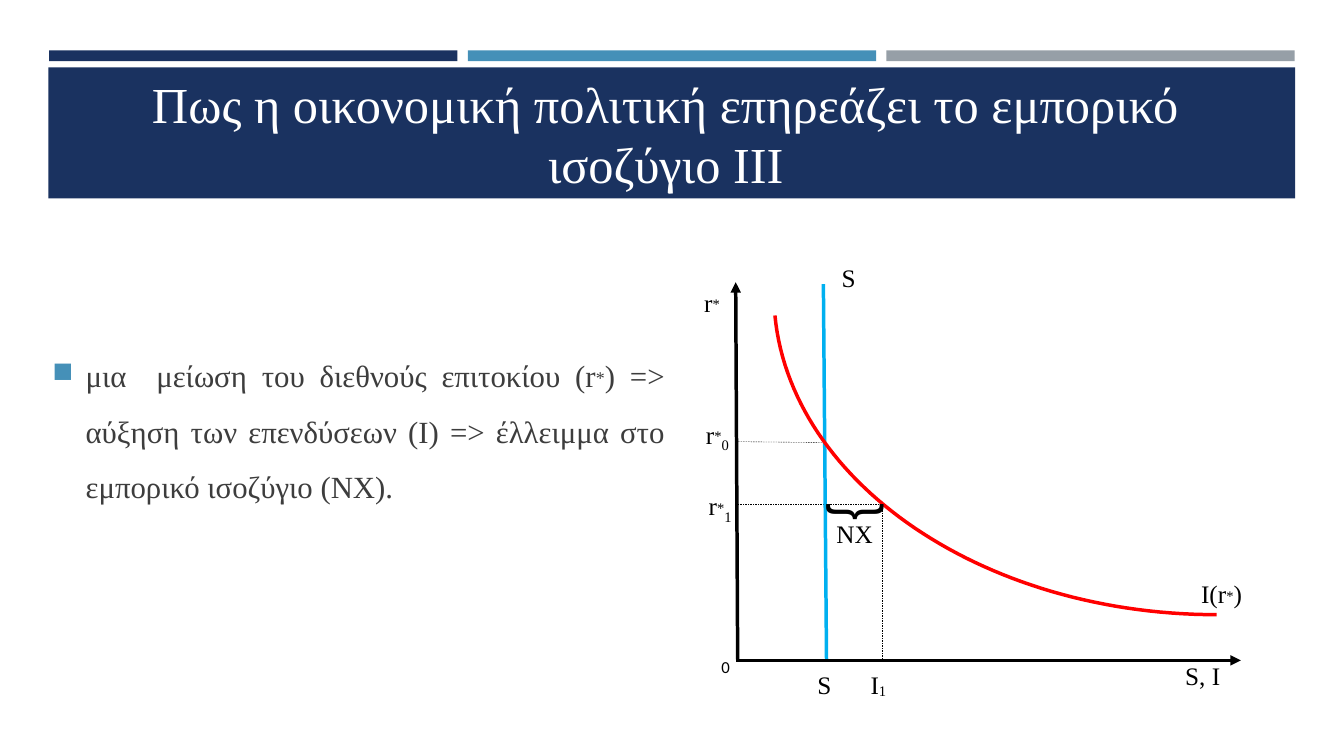
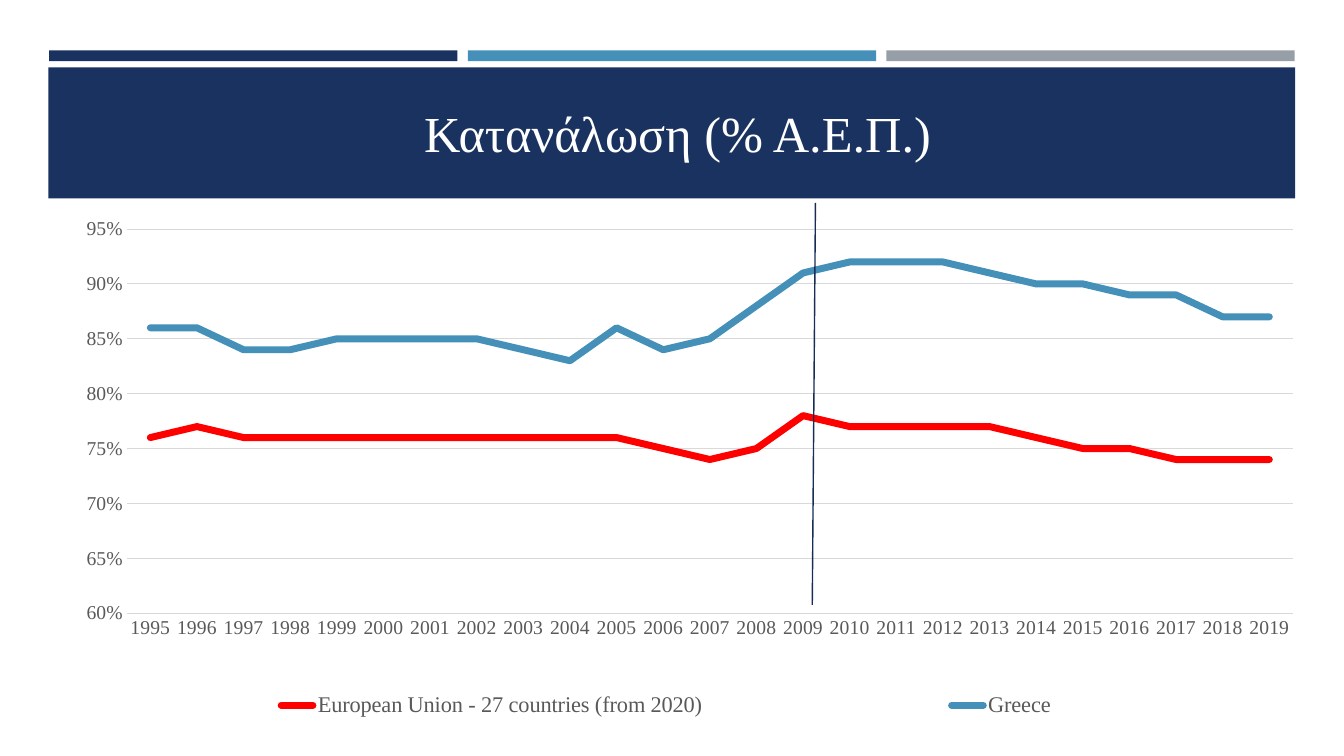
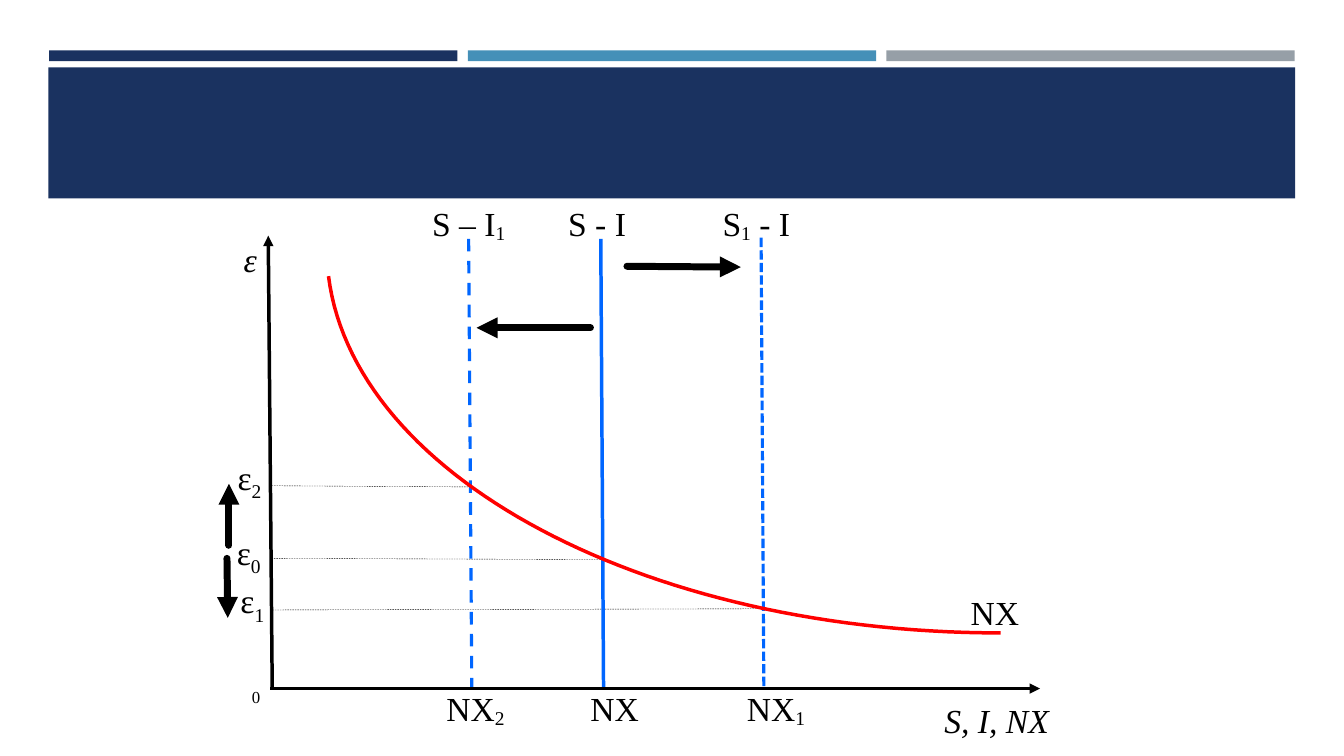
import pptx
import pptx.util
import pptx.chart.data
import pptx.dml.color
import pptx.enum.chart
import pptx.enum.dml
import pptx.enum.shapes
import pptx.enum.text
import pptx.oxml
import pptx.oxml.ns

Cm, Pt = pptx.util.Cm, pptx.util.Pt
DASH = pptx.enum.dml.MSO_LINE
ALIGN = pptx.enum.text.PP_ALIGN
qn = pptx.oxml.ns.qn

COLORS = {
    "navy": "1A3260", "blue": "4590B8", "gray": "969FA7", "white": "FFFFFF",
    "black": "000000", "body": "3D3D3D", "axis": "595959", "grid": "D9D9D9",
    "red": "FF0000", "cyan": "00B0F0", "royal": "0066FF", "marker": "172D56",
}
FONT = "Times New Roman"

# Content; positions are in cm, runs are (text, baseline %)
BARS = ["navy", "blue", "gray"]
POLICY_TITLE = "Πως η οικονομική πολιτική επηρεάζει το εμπορικό ισοζύγιο ΙΙΙ"
CONSUMPTION_TITLE = "Κατανάλωση (% Α.Ε.Π.)"
POLICY_TEXT = [
    ("μια  μείωση του διεθνούς επιτοκίου (r", 0), ("*", 10),
    (") => αύξηση των επενδύσεων (I) => έλλειμμα στο εμπορικό ισοζύγιο (NX).", 0),
]

# Line styles: colour, width in pt, dash, arrowhead
LINES = {
    "guide": ("black", 0.25, DASH.DASH, False),
    "axis": ("black", 2.5, None, True),
    "saving": ("cyan", 2.5, None, False),
    "balance": ("royal", 2.5, None, False),
    "balance left": ("royal", 2.25, DASH.DASH, False),
    "balance right": ("royal", 2.25, DASH.SQUARE_DOT, False),
    "shift": ("black", 5, None, True),
    "marker": ("marker", 1, None, False),
}

INVESTMENT = {
    "size": 18,
    "curve": [(30.66, 15.49), (24.82, 15.49), (19.94, 12.19), (19.53, 7.95)],
    "lines": [
        ("guide", 20.78, 11.15, 18.57, 11.13),
        ("guide", 22.28, 12.7, 18.57, 12.7),
        ("guide", 22.23, 16.61, 22.23, 12.7),
        ("saving", 20.75, 7.16, 20.83, 16.64),
        ("axis", 18.54, 16.64, 31.27, 16.64),
        ("axis", 18.59, 16.61, 18.54, 7.11),
    ],
    # left, top, width, runs, font changes
    "labels": [
        (17.3, 7.11, 1.09, [("r", 0), ("*", 10)], {"align": ALIGN.RIGHT}),
        (17.3, 10.44, 1.32, [("r", 0), ("*", 10), ("0", -25)], {"align": ALIGN.RIGHT}),
        (17.37, 12.24, 1.32, [("r", 0), ("*", 10), ("1", -25)], {"align": ALIGN.RIGHT}),
        (29.62, 16.51, 1.65, [("S, I", 0)], {}),
        (20.96, 6.48, 0.81, [("S", 0)], {}),
        (30.02, 14.45, 3.23, [("I(r", 0), ("*", 10), (")", 0)], {}),
        (20.83, 12.93, 1.45, [("NX", 0)], {}),
        (17.93, 16.43, 0.79, [("0", 0)], {"size": 12, "font": "Calibri"}),
        (20.35, 16.74, 0.91, [("S", 0)], {}),
        (21.69, 16.74, 1.19, [("Ι", 0), ("1", -10)], {}),
    ],
}

EXCHANGE_RATE = {
    "size": 24,
    "curve": [(25.22, 15.95), (16.31, 15.95), (8.92, 12.04), (8.28, 6.96)],
    "lines": [
        ("guide", 15.19, 14.1, 6.81, 14.07),
        ("guide", 19.25, 15.34, 6.83, 15.37),
        ("guide", 11.86, 12.27, 6.81, 12.24),
        ("balance", 15.14, 6.02, 15.21, 17.35),
        ("balance left", 11.81, 6.02, 11.89, 17.35),
        ("balance right", 19.18, 5.99, 19.25, 17.35),
        ("axis", 6.81, 17.35, 26.21, 17.35),
        ("axis", 6.86, 17.32, 6.76, 5.94),
        ("shift", 14.88, 8.26, 12.01, 8.26),
        ("shift", 15.8, 6.71, 18.67, 6.73),
        ("shift", 5.77, 13.74, 5.77, 12.19),
        ("shift", 5.72, 14.07, 5.74, 15.57),
    ],
    "labels": [
        (23.55, 17.5, 3.35, [("S, I, NX", 0)], {"italic": True}),
        (5.89, 5.89, 0.69, [("ε", 0)], {"italic": True}),
        (10.64, 5, 2.54, [("S – I", 0), ("1", -10)], {}),
        (14.07, 5, 2.16, [("S - I", 0)], {}),
        (17.96, 5, 3.02, [("S", 0), ("1", -10), (" - I", 0)], {}),
        (24.21, 14.78, 2.16, [("NX", 0)], {}),
        (5.72, 13.28, 1.17, [("ε", 0), ("0", -25)], {}),
        (4.01, 14.5, 2.9, [("ε", 0), ("1", -25)], {"align": ALIGN.RIGHT}),
        (5.21, 11.38, 1.63, [("ε", 0), ("2", -25)], {"align": ALIGN.RIGHT}),
        (11, 17.22, 2.16, [("NX", 0), ("2", -10)], {}),
        (14.63, 17.2, 2.16, [("NX", 0)], {}),
        (18.57, 17.22, 2.16, [("NX", 0), ("1", -10)], {}),
        (6.1, 17.17, 0.66, [("0", 0)], {"size": 12}),
    ],
}

YEARS = [str(year) for year in range(1995, 2020)]
CONSUMPTION = [
    ("European Union - 27 countries (from 2020)", "red",
     [76, 77, 76, 76, 76, 76, 76, 76, 76, 76, 76, 75, 74,
      75, 78, 77, 77, 77, 77, 76, 75, 75, 74, 74, 74]),
    ("Greece", "blue",
     [86, 86, 84, 84, 85, 85, 85, 85, 84, 83, 86, 84, 85,
      88, 91, 92, 92, 92, 91, 90, 90, 89, 89, 87, 87]),
]


def rgb(name):
    return pptx.dml.color.RGBColor.from_string(COLORS[name])


def add_text(s, x, y, w, h, runs, size, color="black", font=FONT,
             align=ALIGN.LEFT, italic=False, anchor="TOP"):
    sp = s.shapes.add_textbox(Cm(x), Cm(y), Cm(w), Cm(h))
    tf = sp.text_frame
    tf.word_wrap = True
    tf.vertical_anchor = getattr(pptx.enum.text.MSO_ANCHOR, anchor)
    p = tf.paragraphs[0]
    p.alignment = align
    for text, baseline in runs:
        r = p.add_run()
        r.text = text
        r.font.name, r.font.size, r.font.italic = font, Pt(size), italic
        r.font.color.rgb = rgb(color)
        if baseline:
            r.font._element.set("baseline", str(baseline * 1000))
    return sp


def add_rect(s, x, y, w, h, color):
    sp = s.shapes.add_shape(pptx.enum.shapes.MSO_SHAPE.RECTANGLE, Cm(x), Cm(y), Cm(w), Cm(h))
    sp.shadow.inherit = False
    sp.fill.solid()
    sp.fill.fore_color.rgb = rgb(color)
    sp.line.fill.background()


def add_line(s, style, x1, y1, x2, y2):
    color, width, dash, arrow = LINES[style]
    cn = s.shapes.add_connector(pptx.enum.shapes.MSO_CONNECTOR.STRAIGHT,
                                Cm(x1), Cm(y1), Cm(x2), Cm(y2))
    cn.line.color.rgb = rgb(color)
    cn.line.width = Pt(width)
    if dash:
        cn.line.dash_style = dash
    ln = cn.line._get_or_add_ln()
    if style == "shift":
        ln.set("cap", "rnd")
    if arrow:
        ln.append(ln.makeelement(qn("a:tailEnd"), {"type": "triangle"}))
    sp_pr = cn._element.spPr
    sp_pr.append(sp_pr.makeelement(qn("a:effectLst"), {}))


def add_curve(s, controls, steps=60):
    """Draw a cubic Bezier curve as a fine polyline."""
    points = []
    for i in range(steps + 1):
        t = i / steps
        weights = [(1 - t) ** 3, 3 * t * (1 - t) ** 2, 3 * t * t * (1 - t), t ** 3]
        points.append(tuple(Cm(sum(k * c[axis] for k, c in zip(weights, controls)))
                            for axis in (0, 1)))
    builder = s.shapes.build_freeform(*points[0])
    builder.add_line_segments(points[1:], close=False)
    sp = builder.convert_to_shape()
    sp.shadow.inherit = False
    sp.fill.background()
    sp.line.color.rgb = rgb("red")
    sp.line.width = Pt(2.5)


def add_diagram(s, diagram):
    for line in diagram["lines"]:
        add_line(s, *line)
    add_curve(s, diagram["curve"])
    for x, y, w, runs, changes in diagram["labels"]:
        options = {"size": diagram["size"], **changes}
        tf = add_text(s, x, y, w, 1.3, runs, **options).text_frame
        # Free the side the text grows towards, so that labels stay on one line
        if options.get("align") == ALIGN.RIGHT:
            tf.margin_left = 0
        else:
            tf.margin_right = 0


def add_base(prs):
    """Blank slide with the three bars and the title band."""
    s = prs.slides.add_slide(prs.slide_layouts[6])
    for i, color in enumerate(BARS):
        add_rect(s, 1.24 + i * 10.55, 1.27, 10.29, 0.27, color)
    add_rect(s, 1.22, 1.7, 31.42, 3.3, "navy")
    return s


def add_title(s, text, x, y, w, h, anchor):
    add_text(s, x, y, w, h, [(text, 0)], 36, "white", align=ALIGN.CENTER, anchor=anchor)


def style_font(font, size):
    font.name, font.size = FONT, Pt(size)
    font.color.rgb = rgb("axis")


def set_layout(parent, x, y, w, h, inner=False):
    """Fix a chart part at fractions of the chart area."""
    target = '<c:layoutTarget val="inner"/>' if inner else ""
    sizes = "".join(f'<c:{k} val="{v}"/>' for k, v in zip("xywh", (x, y, w, h)))
    layout = pptx.oxml.parse_xml(
        '<c:layout xmlns:c="http://schemas.openxmlformats.org/drawingml/2006/chart">'
        f'<c:manualLayout>{target}<c:xMode val="edge"/><c:yMode val="edge"/>{sizes}'
        '</c:manualLayout></c:layout>')
    for old in parent.findall(qn("c:layout")):
        parent.remove(old)
    before = parent.find(qn("c:legendPos"))
    parent.insert(0 if before is None else parent.index(before) + 1, layout)


def add_consumption_chart(s):
    data = pptx.chart.data.CategoryChartData(number_format="0%")
    data.categories = YEARS
    for name, _, percents in CONSUMPTION:
        data.add_series(name, [v / 100 for v in percents])
    chart = s.shapes.add_chart(pptx.enum.chart.XL_CHART_TYPE.LINE, Cm(0.99), Cm(5.11),
                               Cm(31.6), Cm(13.26), data).chart
    style_font(chart.font, 16)
    chart.has_title = False
    for series, (_, color, _) in zip(chart.plots[0].series, CONSUMPTION):
        series.smooth = False
        series.marker.style = pptx.enum.chart.XL_MARKER_STYLE.NONE
        series.format.line.color.rgb = rgb(color)
        series.format.line.width = Pt(5)
        series.format.line._get_or_add_ln().set("cap", "rnd")
    chart.plots[0].vary_by_categories = False

    # Axes
    years, shares = chart.category_axis, chart.value_axis
    for axis in (years, shares):
        axis.major_tick_mark = axis.minor_tick_mark = pptx.enum.chart.XL_TICK_MARK.NONE
        style_font(axis.tick_labels.font, 14)
    shares.minimum_scale, shares.maximum_scale, shares.major_unit = 0.6, 0.95, 0.05
    shares.tick_labels.number_format = "0%"
    shares.tick_labels.number_format_is_linked = False
    shares.format.line.fill.background()
    for line in (years.format.line, shares.major_gridlines.format.line):
        line.color.rgb = rgb("grid")
        line.width = Pt(0.75)

    # Legend and plot position
    chart.has_legend = True
    chart.legend.position = pptx.enum.chart.XL_LEGEND_POSITION.BOTTOM
    chart.legend.include_in_layout = False
    style_font(chart.legend.font, 16)
    set_layout(chart.legend._element, 0, 0.92, 1, 0.07)
    set_layout(chart._chartSpace.chart.plotArea, 0.07, 0.05, 0.93, 0.73, inner=True)


def add_policy_text(s):
    sp = add_text(s, 1.07, 8.41, 15.93, 5.49, POLICY_TEXT, 22, "body", align=ALIGN.JUSTIFY)
    p = sp.text_frame.paragraphs[0]
    p.line_spacing, p.space_after = 1.5, Pt(6)
    p_pr = p._p.get_or_add_pPr()
    p_pr.set("marL", str(Cm(0.84)))
    p_pr.set("indent", str(-Cm(0.84)))
    color = p_pr.makeelement(qn("a:buClr"), {})
    color.append(color.makeelement(qn("a:srgbClr"), {"val": COLORS["blue"]}))
    p_pr.append(color)
    for tag, value in (("buSzPct", {"val": "92000"}), ("buChar", {"char": "■"})):
        p_pr.append(p_pr.makeelement(qn("a:" + tag), value))


def main():
    prs = pptx.Presentation()
    prs.slide_width, prs.slide_height = Cm(33.87), Cm(19.05)

    # Interest rate and trade balance
    s = add_base(prs)
    add_title(s, POLICY_TITLE, 1.32, 1.12, 30.91, 3.89, "BOTTOM")
    add_policy_text(s)
    add_diagram(s, INVESTMENT)
    brace = add_text(s, 20.22, 9.7, 3.71, 3.61, [("{", 0)], 44, font="Arial Narrow")
    brace.rotation = 270

    # Consumption chart
    s = add_base(prs)
    add_consumption_chart(s)
    add_title(s, CONSUMPTION_TITLE, 1.37, 2.44, 31.42, 2.67, "TOP")
    add_line(s, "marker", 20.55, 5.11, 20.47, 15.24)

    # Exchange rate and net exports
    s = add_base(prs)
    add_diagram(s, EXCHANGE_RATE)

    prs.save("out.pptx")


if __name__ == "__main__":
    main()
